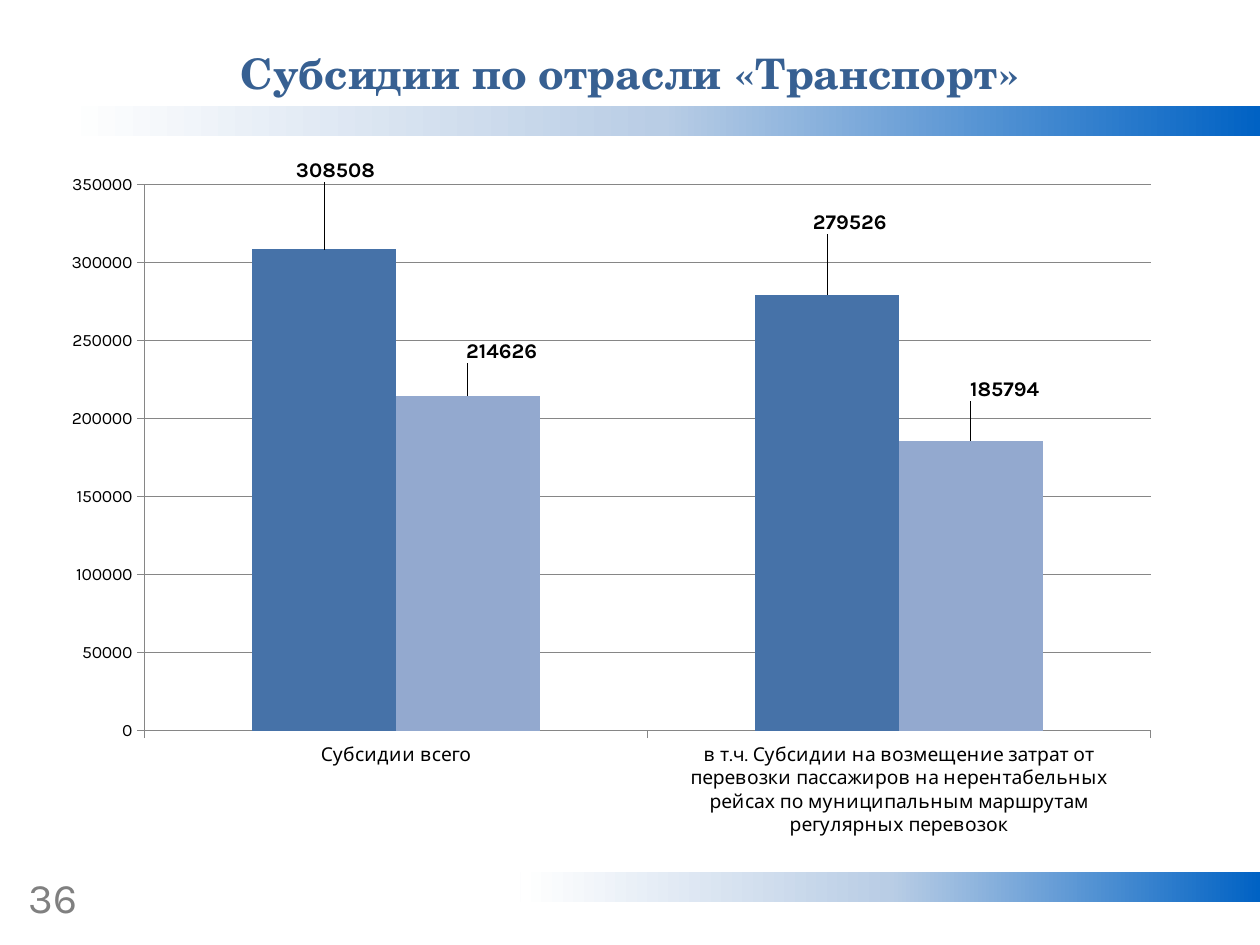
from copy import deepcopy
from dataclasses import dataclass

from pptx import Presentation
from pptx import util as u
from pptx.chart.data import CategoryChartData
from pptx.dml.color import RGBColor
from pptx.enum import chart as ch, shapes, text
from pptx.oxml import parse_xml
from pptx.oxml.ns import nsdecls, qn

BODY_FONT = "Karla"
TITLE_FONT = "TeX Gyre Schola"
GRID = "868686"
BAND_STOPS = [(0, "0062C4"), (0.5, "B9CDE5"), (1, "FFFFFF")]
CATEGORIES = [
    "Субсидии всего",
    "в т.ч. Субсидии на возмещение затрат от перевозки пассажиров "
    "на нерентабельных рейсах по муниципальным маршрутам регулярных перевозок",
]


@dataclass
class Band:
    left: float
    top: float


@dataclass
class Bars:
    name: str
    color: str
    values: list[int]
    label_shifts: list[tuple[float, float]]


BANDS = [Band(0.51, 0.84), Band(4.13, 6.92)]
SERIES = [
    Bars("Series 1", "4672A8", [308508, 279526], [(0.01, -0.09), (0.02, -0.08)]),
    Bars("Series 2", "93A9CF", [214626, 185794], [(0.03, -0.04), (0.03, -0.05)]),
]


def rgb(value: str) -> RGBColor:
    return RGBColor.from_string(value)


def style_font(font, size: float, color: str, name: str = BODY_FONT, bold: bool = False) -> None:
    font.size = u.Pt(size)
    font.name = name
    font.bold = bold
    font.color.rgb = rgb(color)


def layout_xml(x: float, y: float, w: float = 0, h: float = 0):
    target = '<c:layoutTarget val="inner"/>' if w else ""
    modes = '<c:xMode val="edge"/><c:yMode val="edge"/>' if w else ""
    size = f'<c:w val="{w}"/><c:h val="{h}"/>' if w else ""
    return parse_xml(
        f'<c:layout {nsdecls("c")}><c:manualLayout>{target}{modes}'
        f'<c:x val="{x}"/><c:y val="{y}"/>{size}</c:manualLayout></c:layout>'
    )


def add_band(s, band: Band) -> None:
    sp = s.shapes.add_shape(
        shapes.MSO_SHAPE.RECTANGLE, u.Inches(band.left), u.Inches(band.top),
        u.Inches(10 - band.left), u.Inches(0.24),
    )
    sp.shadow.inherit = False
    sp.line.fill.background()
    sp.fill.gradient()
    sp.fill.gradient_angle = 180
    stops = sp._element.spPr.find(qn("a:gradFill")).find(qn("a:gsLst"))
    stops.insert(1, deepcopy(stops[0]))
    for stop, (position, color) in zip(sp.fill.gradient_stops, BAND_STOPS):
        stop.position = position
        stop.color.rgb = rgb(color)


def style_axis(axis, size: float) -> None:
    style_font(axis.tick_labels.font, size, "000000")
    axis.format.line.color.rgb = rgb(GRID)
    axis.format.line.width = u.Pt(0.75)
    axis.major_tick_mark = ch.XL_TICK_MARK.OUTSIDE
    axis.minor_tick_mark = ch.XL_TICK_MARK.NONE


def style_bars(series, bars: Bars) -> None:
    series.format.fill.solid()
    series.format.fill.fore_color.rgb = rgb(bars.color)
    series.data_labels.show_value = True
    style_font(series.data_labels.font, 12, "000000", bold=True)
    for i, shift in enumerate(bars.label_shifts):
        label = series.points[i].data_label
        style_font(label.font, 12, "000000", bold=True)
        label.position = ch.XL_LABEL_POSITION.OUTSIDE_END
        series._element.findall(".//" + qn("c:dLbl"))[i].insert(1, layout_xml(*shift))


def add_subsidy_chart(s) -> None:
    data = CategoryChartData()
    data.categories = CATEGORIES
    for bars in SERIES:
        data.add_series(bars.name, bars.values)
    chart = s.shapes.add_chart(
        ch.XL_CHART_TYPE.COLUMN_CLUSTERED, u.Inches(0.39), u.Inches(1.25),
        u.Inches(8.92), u.Inches(5.51), data,
    ).chart
    style_font(chart.font, 10, "000000", "Calibri")
    chart.has_title = False
    chart.has_legend = False
    plot = chart.plots[0]
    plot.vary_by_categories = False
    plot.gap_width = 150
    plot.overlap = 0
    area = chart._chartSpace.chart.plotArea
    for old in area.findall(qn("c:layout")):
        area.remove(old)
    area.insert(0, layout_xml(0.085, 0.035, 0.895, 0.79))
    style_axis(chart.category_axis, 11)
    axis = chart.value_axis
    style_axis(axis, 10)
    axis.minimum_scale, axis.maximum_scale, axis.major_unit = 0, 350000, 50000
    axis.has_major_gridlines = True
    axis.major_gridlines.format.line.color.rgb = rgb(GRID)
    axis.major_gridlines.format.line.width = u.Pt(0.75)
    for series, bars in zip(plot.series, SERIES):
        style_bars(series, bars)


def add_title(s) -> None:
    sp = s.shapes.title
    sp.left, sp.top = u.Inches(-0.22), u.Inches(0.32)
    sp.width, sp.height = u.Inches(10.44), u.Inches(0.52)
    tf = sp.text_frame
    tf.auto_size = text.MSO_AUTO_SIZE.NONE
    tf.vertical_anchor = text.MSO_ANCHOR.TOP
    tf.margin_top = tf.margin_bottom = u.Inches(0.06)
    p = tf.paragraphs[0]
    p.alignment = text.PP_ALIGN.CENTER
    r = p.add_run()
    r.text = "Субсидии по отрасли «Транспорт»"
    style_font(r.font, 24, "376092", TITLE_FONT, True)


def add_page_number(s) -> None:
    sp = s.shapes.add_textbox(u.Inches(0.13), u.Inches(6.87), u.Inches(0.62), u.Inches(0.5))
    tf = sp.text_frame
    tf.word_wrap = True
    r = tf.paragraphs[0].add_run()
    r.text = "36"
    style_font(r.font, 24, "808080")


def main() -> None:
    prs = Presentation()
    prs.slide_width, prs.slide_height = u.Inches(10), u.Inches(7.5)
    s = prs.slides.add_slide(prs.slide_layouts[5])
    add_subsidy_chart(s)
    for band in BANDS:
        add_band(s, band)
    add_title(s)
    add_page_number(s)
    prs.save("out.pptx")


if __name__ == "__main__":
    main()
